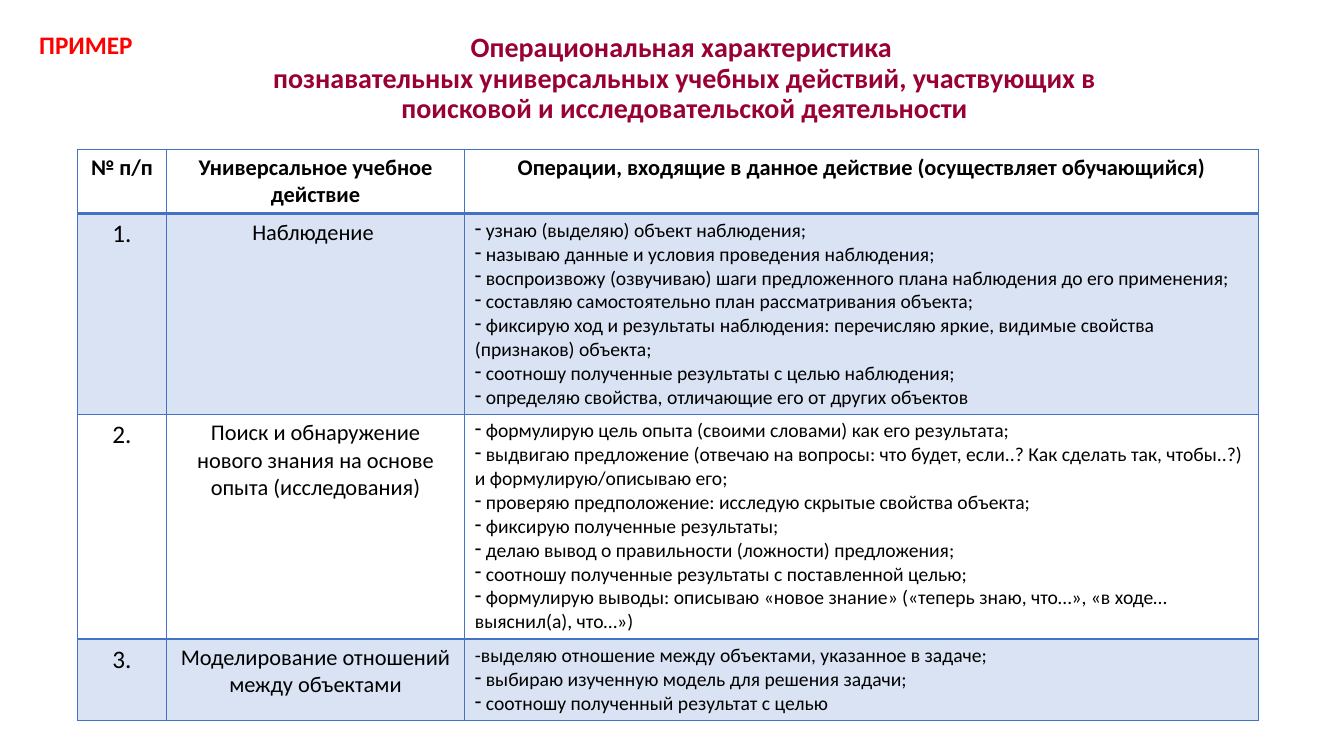
from lxml import etree
from pptx import Presentation
from pptx.dml.color import RGBColor
from pptx.enum import text
from pptx.oxml import ns
from pptx.util import Inches, Pt

COLORS = {"title": "990033", "tag": "FF0000", "text": "000000",
          "border": "4472C4", "band": "DAE3F3", "plain": "FFFFFF"}
FONT = "Calibri"

TITLE = ("Операциональная характеристика \n"
         "познавательных универсальных учебных действий, участвующих в "
         "поисковой и исследовательской деятельности")
TAG = "ПРИМЕР"
HEADER = ("№ п/п", "Универсальное учебное действие",
          "Операции, входящие в данное действие (осуществляет обучающийся)")
ACTIONS = [
    ("1.", "Наблюдение ", [
        " узнаю (выделяю) объект наблюдения;",
        " называю данные и условия проведения наблюдения;",
        " воспроизвожу (озвучиваю) шаги предложенного плана наблюдения до его применения;",
        " составляю самостоятельно план рассматривания объекта;",
        " фиксирую ход и результаты наблюдения: перечисляю яркие, видимые свойства (признаков) объекта;",
        " соотношу полученные результаты с целью наблюдения;",
        " определяю свойства, отличающие его от других объектов"]),
    ("2.", "Поиск и обнаружение нового знания на основе опыта (исследования)", [
        " формулирую цель опыта (своими словами) как его результата;",
        " выдвигаю предложение (отвечаю на вопросы: что будет, если..? Как сделать так, чтобы..?) и формулирую/описываю его;",
        " проверяю предположение: исследую скрытые свойства объекта;",
        " фиксирую полученные результаты;",
        " делаю вывод о правильности (ложности) предложения;",
        " соотношу полученные результаты с поставленной целью;",
        " формулирую выводы: описываю «новое знание» («теперь знаю, что…», «в ходе…выяснил(а), что…»)"]),
    ("3.", "Моделирование отношений между объектами", [
        "-выделяю отношение между объектами, указанное в задаче;",
        " выбираю изученную модель для решения задачи;",
        " соотношу полученный результат с целью"]),
]
COLUMNS = (0.88, 2.96, 7.87)
ROWS = (0.64, 1.99, 2.23, 0.81)
BODY_SIZES = (18, 16, 14)


def write(tf, lines, size, color, bold=False, centred=False):
    tf.word_wrap = True
    for i, line in enumerate(lines):
        p = tf.paragraphs[0] if i == 0 else tf.add_paragraph()
        p.text = line
        p.alignment = text.PP_ALIGN.CENTER if centred else text.PP_ALIGN.LEFT
        for r in p.runs:
            r.font.name = FONT
            r.font.size = Pt(size)
            r.font.bold = bold
            r.font.color.rgb = RGBColor.from_string(COLORS[color])


def add_text(s, box, content, size, color, centred=False):
    tf = s.shapes.add_textbox(*map(Inches, box)).text_frame
    write(tf, [content], size, color, True, centred)
    return tf


def add_bullet(p):
    pPr = p._p.get_or_add_pPr()
    pPr.set("marL", "0")
    pPr.set("indent", "0")
    etree.SubElement(pPr, ns.qn("a:buChar")).set("char", "-")


def add_borders(cell, widths):
    tcPr = cell._tc.get_or_add_tcPr()
    for side, width in widths.items():
        ln = etree.SubElement(tcPr, ns.qn("a:ln" + side), w=str(Pt(width)))
        fill = etree.SubElement(ln, ns.qn("a:solidFill"))
        etree.SubElement(fill, ns.qn("a:srgbClr"), val=COLORS["border"])


def add_actions_table(s):
    box = (0.77, 1.48, sum(COLUMNS), sum(ROWS))
    table = s.shapes.add_table(len(ROWS), len(COLUMNS), *map(Inches, box)).table
    table.first_row = table.horz_banding = False
    for column, width in zip(table.columns, COLUMNS):
        column.width = Inches(width)
    for row, height in zip(table.rows, ROWS):
        row.height = Inches(height)
    for i, contents in enumerate([HEADER] + ACTIONS):
        for j, content in enumerate(contents):
            cell = table.cell(i, j)
            is_list = isinstance(content, list)
            lines = content if is_list else [content]
            size = BODY_SIZES[j] if i else 16
            write(cell.text_frame, lines, size, "text", i == 0, not is_list)
            if is_list:
                for p in cell.text_frame.paragraphs:
                    if not p.text.startswith("-"):
                        add_bullet(p)
            add_borders(cell, {"L": 1, "R": 1, "T": 2 if i == 1 else 1,
                               "B": 2 if i == 0 else 1})
            cell.fill.solid()
            shade = "band" if i % 2 else "plain"
            cell.fill.fore_color.rgb = RGBColor.from_string(COLORS[shade])


def main():
    prs = Presentation()
    prs.slide_width, prs.slide_height = Inches(13.33), Inches(7.5)
    s = prs.slides.add_slide(prs.slide_layouts[6])
    title = add_text(s, (2.29, 0.16, 9, 1.25), TITLE, 20, "title", True)
    title.vertical_anchor = text.MSO_ANCHOR.MIDDLE
    title.paragraphs[0].line_spacing = 0.9
    add_actions_table(s)
    add_text(s, (0.29, 0.24, 1.75, 0.4), TAG, 18, "tag")
    prs.save("out.pptx")


if __name__ == "__main__":
    main()
